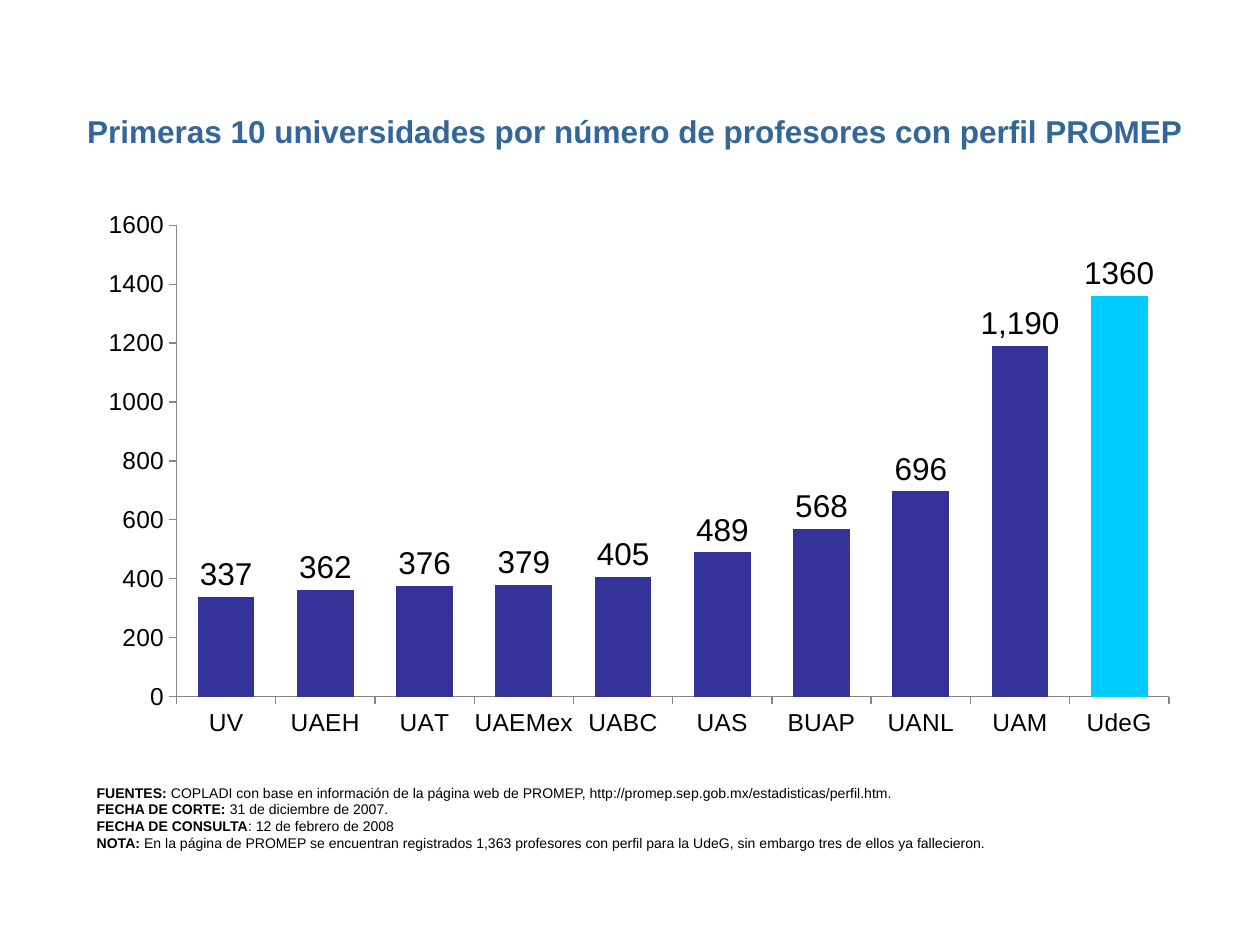
from dataclasses import dataclass

from lxml import etree
from pptx import Presentation
from pptx import util as u
from pptx.chart.data import CategoryChartData
from pptx.dml.color import RGBColor
from pptx.enum import chart as charts, text
from pptx.oxml import parse_xml
from pptx.oxml.ns import nsdecls


@dataclass(frozen=True)
class Theme:
    font: str = "Arial"
    ink: str = "000000"
    heading: str = "336699"
    bar: str = "333399"
    highlight: str = "00CCFF"
    axis: str = "868686"
    title_size: int = 18
    label_size: int = 18
    axis_size: int = 14
    note_size: int = 8


PROFESSORS = {
    "UV": 337, "UAEH": 362, "UAT": 376, "UAEMex": 379, "UABC": 405,
    "UAS": 489, "BUAP": 568, "UANL": 696, "UAM": 1190, "UdeG": 1360,
}

NOTES = [
    ("FUENTES:", " COPLADI con base en información de la página web de PROMEP, "
     "http://promep.sep.gob.mx/estadisticas/perfil.htm."),
    ("FECHA DE CORTE: ", "31 de diciembre de 2007."),
    ("FECHA DE CONSULTA", ": 12 de febrero de 2008"),
    ("NOTA: ", "En la página de PROMEP se encuentran registrados 1,363 profesores "
     "con perfil para la UdeG, sin embargo tres de ellos ya fallecieron."),
]


class SlideBuilder:
    def __init__(self, page, theme):
        self.page = page
        self.theme = theme

    def style(self, font, size, color=None, bold=False):
        font.name = self.theme.font
        font.size = u.Pt(size)
        font.bold = bold
        font.color.rgb = RGBColor.from_string(color or self.theme.ink)

    def title(self, words, left, top, width, height):
        box = self.page.shapes.title
        box.left, box.top, box.width, box.height = map(u.Cm, (left, top, width, height))
        frame = box.text_frame
        frame.text = words
        frame.vertical_anchor = text.MSO_ANCHOR.MIDDLE
        frame.auto_size = text.MSO_AUTO_SIZE.NONE
        para = frame.paragraphs[0]
        para.alignment = text.PP_ALIGN.RIGHT
        self.style(para.font, self.theme.title_size, self.theme.heading, True)

    def notes(self, entries, left, top, width, height):
        box = self.page.shapes.add_textbox(*map(u.Cm, (left, top, width, height)))
        frame = box.text_frame
        frame.word_wrap = True
        frame.auto_size = text.MSO_AUTO_SIZE.SHAPE_TO_FIT_TEXT
        frame.vertical_anchor = text.MSO_ANCHOR.MIDDLE
        for index, (heading, body) in enumerate(entries):
            para = frame.add_paragraph() if index else frame.paragraphs[0]
            para.alignment = text.PP_ALIGN.JUSTIFY
            self.style(para.font, self.theme.note_size)
            for words, bold in ((heading, True), (body, False)):
                span = para.add_run()
                span.text = words
                span.font.bold = bold

    def column_chart(self, values, highlighted, custom_labels, left, top, width, height):
        data = CategoryChartData()
        data.categories = list(values)
        data.add_series("Profesores con perfil PROMEP", list(values.values()))
        chart = self.page.shapes.add_chart(
            charts.XL_CHART_TYPE.COLUMN_CLUSTERED,
            *map(u.Cm, (left, top, width, height)), data).chart
        chart.has_legend = False
        chart.has_title = False
        self.style(chart.font, self.theme.axis_size)
        self.place_plot(chart, x=0.08, y=0.05, w=0.9, h=0.86)

        for axis in (chart.category_axis, chart.value_axis):
            axis.has_major_gridlines = False
            axis.major_tick_mark = charts.XL_TICK_MARK.OUTSIDE
            axis.format.line.color.rgb = RGBColor.from_string(self.theme.axis)
            axis.format.line.width = u.Pt(0.75)
            self.style(axis.tick_labels.font, self.theme.axis_size)
        chart.value_axis.minimum_scale = 0
        chart.value_axis.maximum_scale = 1600
        chart.value_axis.major_unit = 200

        plot = chart.plots[0]
        plot.gap_width = 75
        plot.vary_by_categories = False
        series = plot.series[0]
        names = list(values)
        self.fill(series, self.theme.bar)
        self.fill(series.points[names.index(highlighted)], self.theme.highlight)

        labels = series.data_labels
        labels.show_value = True
        labels.position = charts.XL_LABEL_POSITION.OUTSIDE_END
        self.style(labels.font, self.theme.label_size)
        for name, words in custom_labels.items():
            label = series.points[names.index(name)].data_label
            label.position = charts.XL_LABEL_POSITION.OUTSIDE_END
            span = label.text_frame.paragraphs[0].add_run()
            span.text = words
            self.style(span.font, self.theme.label_size)

    def fill(self, bars, color):
        bars.format.fill.solid()
        bars.format.fill.fore_color.rgb = RGBColor.from_string(color)

    def place_plot(self, chart, **fractions):
        layout = parse_xml(
            f'<c:layout {nsdecls("c")}><c:manualLayout><c:layoutTarget val="inner"/>'
            '<c:xMode val="edge"/><c:yMode val="edge"/></c:manualLayout></c:layout>')
        namespace = etree.QName(layout).namespace
        for name, fraction in fractions.items():
            etree.SubElement(layout[0], f"{{{namespace}}}{name}", val=str(fraction))
        area = chart.element.chart.plotArea
        for previous in area.findall(f"{{{namespace}}}layout"):
            area.remove(previous)
        area.insert(0, layout)


def main():
    deck = Presentation()
    deck.slide_width, deck.slide_height = u.Cm(25.4), u.Cm(19.05)
    page = deck.slides.add_slide(deck.slide_layouts.get_by_name("Title Only"))
    builder = SlideBuilder(page, Theme())
    builder.title("Primeras 10 universidades por número de profesores con perfil PROMEP",
                  1.24, 1.93, 22.86, 1.4)
    builder.notes(NOTES, 1.7, 15.67, 21.62, 1.63)
    builder.column_chart(PROFESSORS, "UdeG", {"UAM": "1,190"}, 1.78, 3.99, 22.23, 11.05)
    deck.save("out.pptx")


if __name__ == "__main__":
    main()
